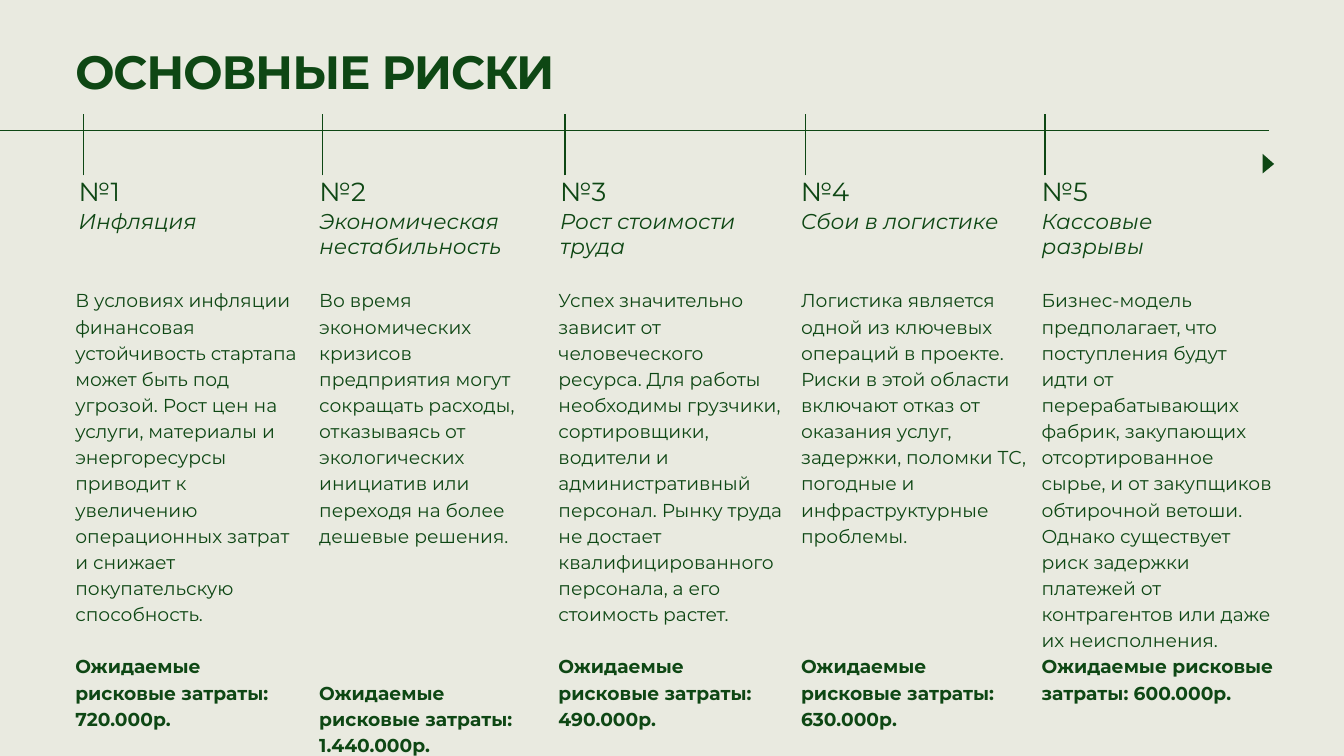
from dataclasses import dataclass

from lxml import etree
from pptx import Presentation
from pptx.dml.color import RGBColor
from pptx.enum.text import MSO_ANCHOR, MSO_AUTO_SIZE, PP_ALIGN
from pptx.oxml.ns import qn
from pptx.slide import Slide
from pptx.text.text import TextFrame
from pptx.util import Inches, Pt

GREEN = RGBColor(0x0E, 0x47, 0x14)
CREAM = RGBColor(0xE9, 0xEA, 0xE0)
FONT = "Montserrat"
TOP = MSO_ANCHOR.TOP
GROW = MSO_AUTO_SIZE.SHAPE_TO_FIT_TEXT
LEFT = PP_ALIGN.LEFT

FIRST_COLUMN = 1.17
COLUMN_PITCH = 3.583
HEADING_WIDTH = 3.05
AXIS_Y = 1.94
TICK_TOP, TICK_BOTTOM = 1.7, 2.61
BODY_LINE = 28


@dataclass(frozen=True)
class Style:
    size: float
    line: float
    bold: bool = False
    italic: bool = False


@dataclass(frozen=True)
class Risk:
    name: str
    description: str
    cost: str
    tick_x: float
    body_x: float
    gap_lines: int
    body_width: float = 3.38
    name_height: float = 0.75


TITLE = Style(50, 43.5, bold=True)
NUMBER = Style(28, 33.6)
NAME = Style(23, 27.6, italic=True)
BODY = Style(20, BODY_LINE)
COST = Style(20, BODY_LINE, bold=True)

RISKS = [
    Risk(
        "Инфляция",
        "В условиях инфляции финансовая устойчивость стартапа может быть под "
        "угрозой. Рост цен на услуги, материалы и энергоресурсы приводит к "
        "увеличению операционных затрат и снижает покупательскую способность.",
        "720.000р.", 1.24, 1.12, 1, name_height=0.38,
    ),
    Risk(
        "Экономическая нестабильность",
        "Во время экономических кризисов предприятия могут сокращать расходы, "
        "отказываясь от экологических инициатив или переходя на более дешевые "
        "решения.",
        "1.440.000р.", 4.8, 4.75, 5,
    ),
    Risk(
        "Рост стоимости труда",
        "Успех значительно зависит от человеческого ресурса. Для работы "
        "необходимы грузчики, сортировщики, водители и административный "
        "персонал. Рынку труда не достает квалифицированного персонала, а его "
        "стоимость растет.",
        "490.000р.", 8.41, 8.31, 1,
    ),
    Risk(
        "Сбои в логистике",
        "Логистика является одной из ключевых операций в проекте. Риски в этой "
        "области включают отказ от оказания услуг, задержки, поломки ТС, "
        "погодные и инфраструктурные проблемы.",
        "630.000р.", 11.99, 11.92, 4, name_height=0.38,
    ),
    Risk(
        "Кассовые разрывы",
        "Бизнес-модель предполагает, что поступления будут идти от "
        "перерабатывающих фабрик, закупающих отсортированное сырье, и от "
        "закупщиков обтирочной ветоши. Однако существует риск задержки платежей "
        "от контрагентов или даже их неисполнения.",
        "600.000р.", 15.55, 15.5, 0, body_width=3.46,
    ),
]


def write(frame: TextFrame, lines: list[tuple[str, Style]], gap: float = 0) -> None:
    frame.word_wrap = True
    frame.auto_size = GROW
    frame.vertical_anchor = TOP
    frame.margin_left = frame.margin_right = 0
    frame.margin_top = frame.margin_bottom = 0
    for index, (text, style) in enumerate(lines):
        para = frame.add_paragraph() if index else frame.paragraphs[0]
        para.alignment = LEFT
        para.line_spacing = Pt(style.line)
        para.space_before = Pt(gap if index else 0)
        span = para.add_run()
        span.text = text
        span.font.name = FONT
        span.font.size = Pt(style.size)
        span.font.bold = style.bold
        span.font.italic = style.italic
        span.font.color.rgb = GREEN


def add_text(
    page: Slide, x: float, y: float, width: float, height: float,
    lines: list[tuple[str, Style]], gap: float = 0,
) -> None:
    box = page.shapes.add_textbox(Inches(x), Inches(y), Inches(width), Inches(height))
    write(box.text_frame, lines, gap)


def add_line(page: Slide, x1: float, y1: float, x2: float, y2: float) -> None:
    line = page.shapes.add_connector(1, Inches(x1), Inches(y1), Inches(x2), Inches(y2))
    line.line.color.rgb = GREEN
    line.line.width = Pt(1.5)
    etree.SubElement(line._element.spPr, qn("a:effectLst"))


def add_arrow(page: Slide) -> None:
    tip, upper, lower = [
        (Inches(x), Inches(y)) for x, y in ((18.96, 2.44), (18.79, 2.29), (18.79, 2.58))
    ]
    builder = page.shapes.build_freeform(*tip)
    builder.add_line_segments([lower, upper], close=True)
    arrow = builder.convert_to_shape()
    arrow.shadow.inherit = False
    arrow.fill.solid()
    arrow.fill.fore_color.rgb = GREEN
    arrow.line.fill.background()


def add_title(page: Slide, text: str) -> None:
    title = page.shapes.title
    title.left, title.top = Inches(1.12), Inches(0.86)
    title.width, title.height = Inches(17.75), Inches(0.68)
    write(title.text_frame, [(text, TITLE)])
    span = title.text_frame.paragraphs[0].runs[0]
    span.font._element.set("spc", "-120")


def add_risk(page: Slide, index: int, risk: Risk) -> None:
    x = FIRST_COLUMN + index * COLUMN_PITCH
    add_line(page, risk.tick_x, TICK_BOTTOM, risk.tick_x, TICK_TOP)
    add_text(page, x, 2.61, HEADING_WIDTH, 0.47, [(f"№{index + 1}", NUMBER)])
    add_text(page, x, 3.09, HEADING_WIDTH, risk.name_height, [(risk.name, NAME)])
    cost = f"Ожидаемые рисковые затраты: {risk.cost}"
    add_text(
        page, risk.body_x, 4.25, risk.body_width, 6.16,
        [(risk.description, BODY), (cost, COST)], risk.gap_lines * BODY_LINE,
    )


def main() -> None:
    deck = Presentation()
    deck.slide_width, deck.slide_height = Inches(20), Inches(11.25)
    page = deck.slides.add_slide(deck.slide_layouts[5])
    page.background.fill.solid()
    page.background.fill.fore_color.rgb = CREAM
    add_title(page, "ОСНОВНЫЕ РИСКИ")
    add_line(page, -0.94, AXIS_Y, 18.88, AXIS_Y)
    add_arrow(page)
    for index, risk in enumerate(RISKS):
        add_risk(page, index, risk)
    deck.save("out.pptx")


if __name__ == "__main__":
    main()
